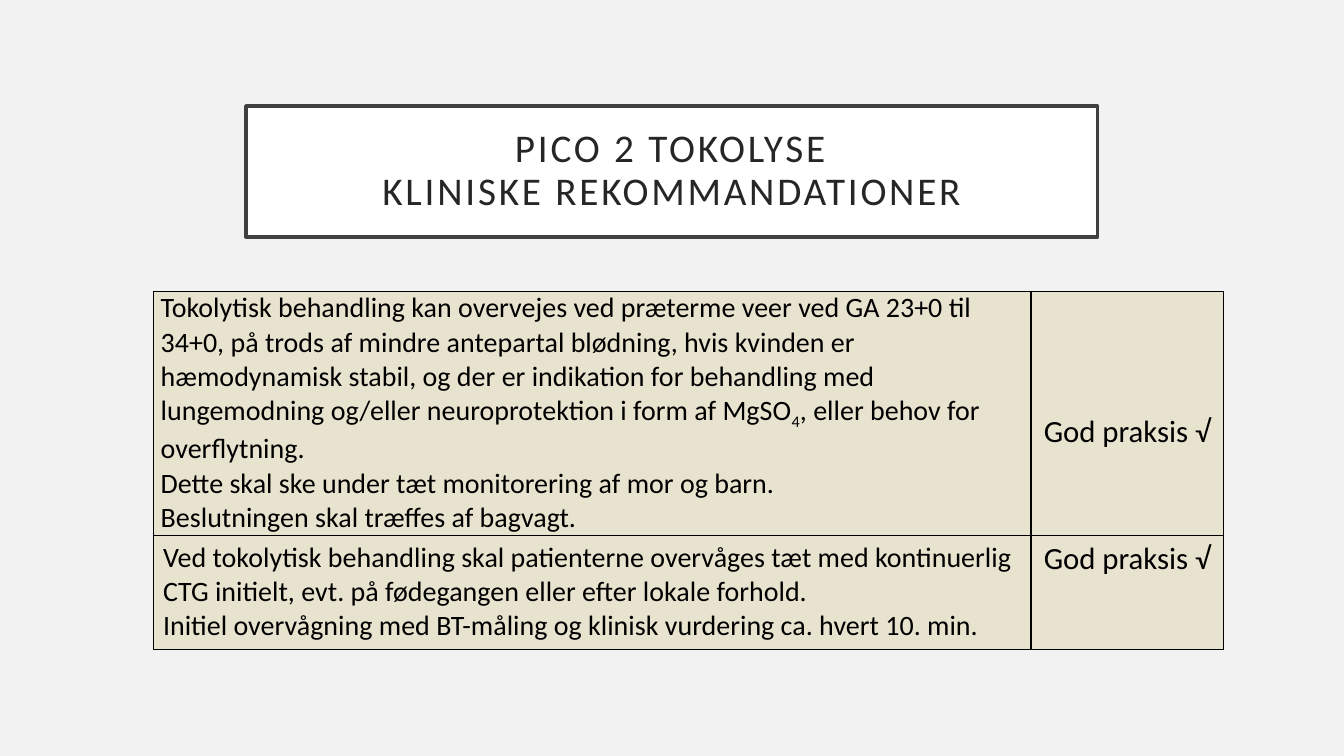
import pptx
import pptx.dml.color
import pptx.enum.shapes
import pptx.enum.text
import pptx.oxml
import pptx.oxml.ns
import pptx.util

Cm, Pt = pptx.util.Cm, pptx.util.Pt
ANCHOR = pptx.enum.text.MSO_ANCHOR
ALIGN = pptx.enum.text.PP_ALIGN


def colour(target, value):
    """Give a fill or a font a solid colour from a hex string."""
    if hasattr(target, "solid"):
        target.solid()
        target = target.fore_color
    else:
        target = target.color
    target.rgb = pptx.dml.color.RGBColor.from_string(value)


def add_span(para, text, size, value, **extra):
    """Add a run of text; extra holds raw run attributes."""
    span = para.add_run()
    span.text = text
    for name, setting in {"name": "Calibri", "size": Pt(size)}.items():
        setattr(span.font, name, setting)
    colour(span.font, value)
    for name, setting in extra.items():
        span._r.get_or_add_rPr().set(name, setting)


deck = pptx.Presentation()
deck.slide_width, deck.slide_height = Cm(33.87), Cm(19.05)
page = deck.slides.add_slide(deck.slide_layouts[6])
colour(page.background.fill, "F2F2F2")

# Title box
box = page.shapes.add_shape(pptx.enum.shapes.MSO_SHAPE.RECTANGLE,
                            Cm(6.2), Cm(2.67), Cm(21.46), Cm(3.3))
box.shadow.inherit = False
colour(box.fill, "FFFFFF")
colour(box.line.fill, "404040")
box.line.width = Pt(2.5)
frame_format = {"word_wrap": True, "vertical_anchor": ANCHOR.MIDDLE}
frame_format.update({f"margin_{side}": Cm(0.5) for side in ("left", "top", "right", "bottom")})
for name, setting in frame_format.items():
    setattr(box.text_frame, name, setting)
para = box.text_frame.paragraphs[0]
para.alignment, para.line_spacing = ALIGN.CENTER, 0.9
add_span(para, "PICO 2 TOKOLYSE", 28, "262626", spc="200")
para.add_line_break()
add_span(para, "KLINISKE REKOMMANDATIONER", 28, "262626", spc="200")

# Recommendations: each cell holds paragraphs, each paragraph a list of pieces
treatment = [
    ["Tokolytisk behandling kan overvejes ved præterme veer ved GA 23+0 til 34+0, "
     "på trods af mindre antepartal blødning, hvis kvinden er hæmodynamisk stabil, "
     "og der er indikation for behandling med lungemodning og/eller neuroprotektion "
     "i form af MgSO", "4", ", eller behov for overflytning."],
    ["Dette skal ske under tæt monitorering af mor og barn."],
    ["Beslutningen skal træffes af bagvagt."],
]
monitoring = [
    ["Ved tokolytisk behandling skal patienterne overvåges tæt med kontinuerlig"],
    ["CTG initielt, evt. på fødegangen eller efter lokale forhold."],
    ["Initiel overvågning med BT-måling og klinisk vurdering ca. hvert 10. min."],
]
grade = [["God praksis √"]]

# Paragraphs, size, alignment, anchor, side margin, top margin, bottom margin
cells = {
    (0, 0): (treatment, 20, ALIGN.LEFT, ANCHOR.TOP, 0.19, 0, 0),
    (0, 1): (grade, 22, ALIGN.CENTER, ANCHOR.MIDDLE, 0.25, 1.08, 0.13),
    (1, 0): (monitoring, 20, ALIGN.LEFT, ANCHOR.TOP, 0.25, 0.13, 0.13),
    (1, 1): (grade, 22, ALIGN.CENTER, ANCHOR.TOP, 0.25, 0.13, 0.13),
}

# Table
widths, heights = (22.12, 4.85), (6.15, 2.87)
table = page.shapes.add_table(2, 2, Cm(3.86), Cm(7.34),
                              Cm(sum(widths)), Cm(sum(heights))).table
table.first_row = table.horz_banding = False
for column, width in zip(table.columns, widths):
    column.width = Cm(width)
for row, height in zip(table.rows, heights):
    row.height = Cm(height)

for place, (paragraphs, size, align, anchor, side, top, bottom) in cells.items():
    cell = table.cell(*place)
    cell_format = {"vertical_anchor": anchor, "margin_left": Cm(side), "margin_right": Cm(side),
                   "margin_top": Cm(top), "margin_bottom": Cm(bottom)}
    for name, setting in cell_format.items():
        setattr(cell, name, setting)

    # Borders come before the fill in the cell properties
    for edge in ("lnL", "lnR", "lnT", "lnB"):
        cell._tc.get_or_add_tcPr().append(pptx.oxml.parse_xml(
            f'<a:{edge} {pptx.oxml.ns.nsdecls("a")} w="{Pt(1)}"><a:solidFill>'
            f'<a:srgbClr val="000000"/></a:solidFill></a:{edge}>'))
    colour(cell.fill, "E8E3CE")

    for index, pieces in enumerate(paragraphs):
        frame = cell.text_frame
        para = frame.add_paragraph() if index else frame.paragraphs[0]
        para.alignment = align
        for piece in pieces:
            lowered = {"baseline": "-25000"} if piece == "4" else {}
            add_span(para, piece, size, "000000", **lowered)

deck.save("out.pptx")
